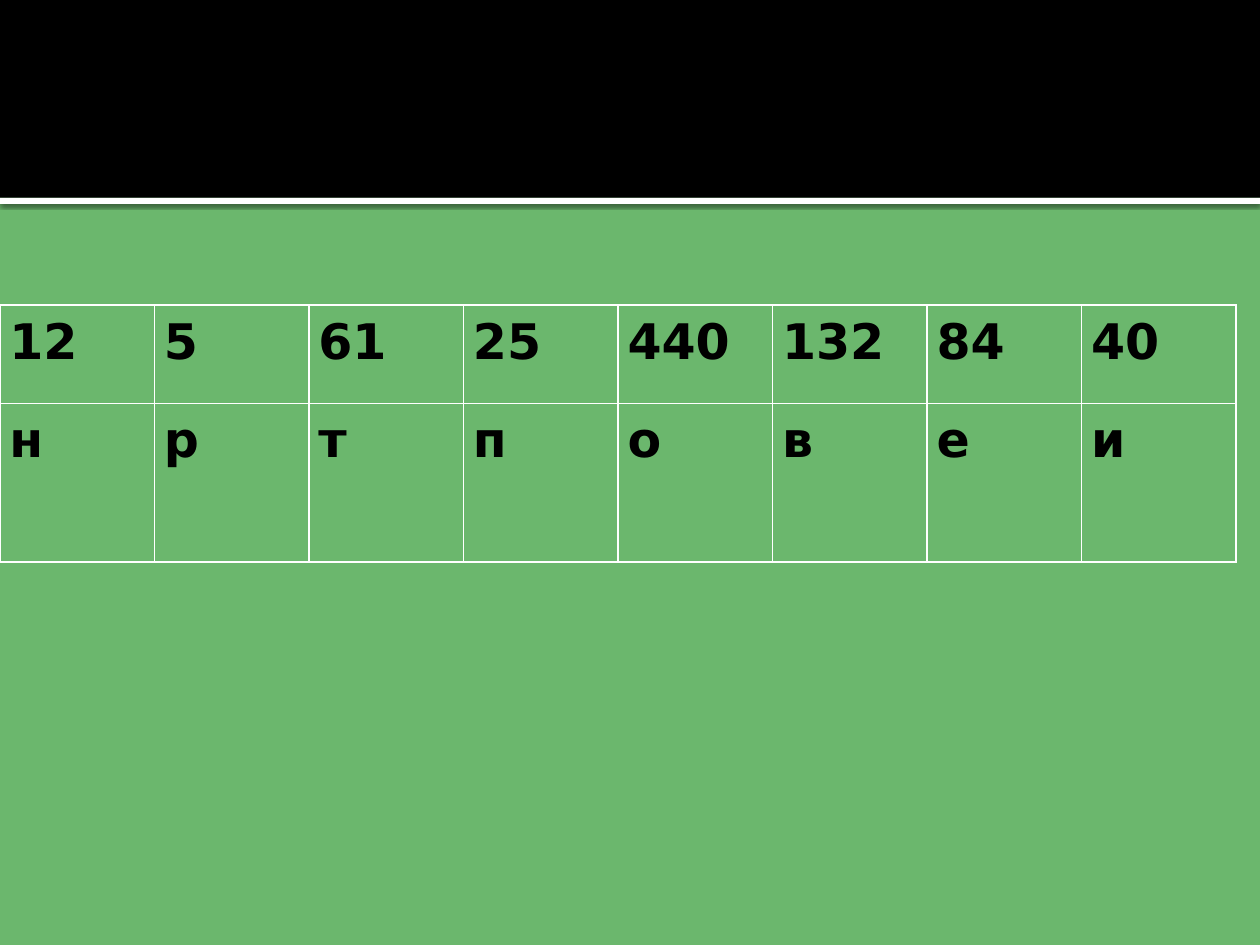
from dataclasses import dataclass

from lxml import etree
from pptx import Presentation
from pptx.dml.color import RGBColor
from pptx.enum import shapes
from pptx.oxml import ns
from pptx.util import Pt


@dataclass(frozen=True)
class Theme:
    background: str = "6BB76D"
    header: str = "000000"
    line: str = "FFFFFF"
    text: str = "000000"
    shadow: str = "000000"
    font: str = "DejaVu Sans"
    size: float = 28
    border: float = 1
    line_spacing: float = 1.15


def add_color(parent, color):
    fill = etree.SubElement(parent, ns.qn("a:solidFill"))
    return etree.SubElement(fill, ns.qn("a:srgbClr"), val=color)


class SlideBuilder:
    def __init__(self, prs, theme):
        self.theme = theme
        self.s = prs.slides.add_slide(prs.slide_layouts[6])
        fill = self.s.background.fill
        fill.solid()
        fill.fore_color.rgb = RGBColor.from_string(theme.background)

    def band(self, top, height, color, shadow=False):
        """Add a full-width bar, optionally with a soft shadow below it."""
        sp = self.s.shapes.add_shape(
            shapes.MSO_SHAPE.RECTANGLE, 0, Pt(top), Pt(720), Pt(height))
        sp.fill.solid()
        sp.fill.fore_color.rgb = RGBColor.from_string(color)
        sp.line.fill.background()
        sp.shadow.inherit = False
        if shadow:
            effects = sp._element.spPr.find(ns.qn("a:effectLst"))
            outer = etree.SubElement(
                effects, ns.qn("a:outerShdw"), blurRad=str(Pt(2.5)),
                dist=str(Pt(0.8)), dir="5400000", algn="tl", rotWithShape="0")
            rgb = etree.SubElement(
                outer, ns.qn("a:srgbClr"), val=self.theme.shadow)
            etree.SubElement(rgb, ns.qn("a:alpha"), val="60000")

    def table(self, rows, left, top, col_width, row_heights):
        cols = len(rows[0])
        table = self.s.shapes.add_table(
            len(rows), cols, Pt(left), Pt(top),
            Pt(col_width * cols), Pt(sum(row_heights))).table
        table.first_row = table.horz_banding = False
        for column in table.columns:
            column.width = Pt(col_width)
        for row, height, values in zip(table.rows, row_heights, rows):
            row.height = Pt(height)
            for cell, value in zip(row.cells, values):
                self.cell(cell, value)

    def cell(self, cell, value):
        cell.margin_left = cell.margin_right = Pt(5.4)
        cell.margin_top = cell.margin_bottom = 0
        cell.fill.background()
        self.borders(cell)
        cell.text = value
        p = cell.text_frame.paragraphs[0]
        p.line_spacing = self.theme.line_spacing
        p.font.name = self.theme.font
        p.font.size = Pt(self.theme.size)
        p.font.bold = True
        p.font.color.rgb = RGBColor.from_string(self.theme.text)

    def borders(self, cell):
        tc_pr = cell._tc.get_or_add_tcPr()
        for i, side in enumerate("LRTB"):
            ln = etree.Element(
                ns.qn(f"a:ln{side}"), w=str(Pt(self.theme.border)))
            add_color(ln, self.theme.line)
            tc_pr.insert(i, ln)


def main():
    prs = Presentation()
    prs.slide_width, prs.slide_height = Pt(720), Pt(540)
    theme = Theme()
    slide = SlideBuilder(prs, theme)

    header_height = 113
    slide.band(header_height, 3.6, theme.line, shadow=True)
    slide.band(0, header_height, theme.header)

    numbers = ["12", "5", "61", "25", "440", "132", "84", "40"]
    letters = list("нртповеи")
    slide.table([numbers, letters], left=0, top=174.4,
                col_width=88.3, row_heights=[56.2, 90.6])

    prs.save("out.pptx")


if __name__ == "__main__":
    main()
